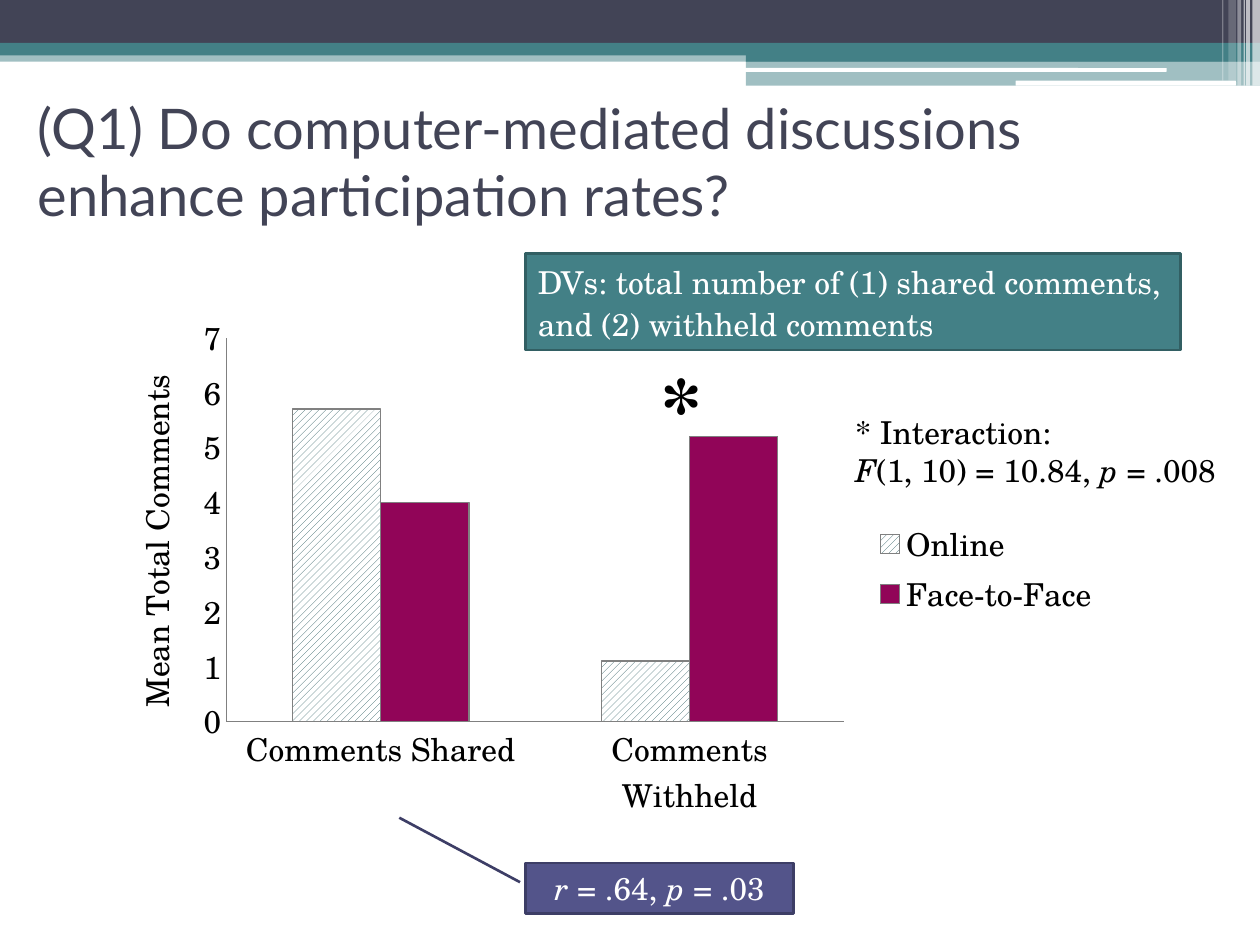
"""Builds the slide on participation rates in computer-mediated discussions."""
from dataclasses import dataclass

from lxml.etree import SubElement
from pptx import Presentation
from pptx.chart.data import CategoryChartData
from pptx.dml.color import RGBColor
from pptx.enum.chart import XL_CHART_TYPE, XL_LEGEND_POSITION, XL_TICK_MARK
from pptx.enum.dml import MSO_PATTERN
from pptx.enum.shapes import MSO_SHAPE
from pptx.enum.text import MSO_ANCHOR, PP_ALIGN
from pptx.oxml import parse_xml
from pptx.oxml.ns import nsdecls, qn
from pptx.util import Inches, Pt


@dataclass(frozen=True)
class Theme:
    heading_font: str = "Lato"
    body_font: str = "TeX Gyre Schola"
    title_size: int = 32
    body_size: int = 18
    star_size: int = 48
    ink: str = "424456"
    teal: str = "438086"
    teal_edge: str = "325F63"
    hatch: str = "326065"
    violet: str = "53548A"
    violet_edge: str = "3D3E66"
    plum: str = "910558"
    grey: str = "808080"
    black: str = "000000"
    white: str = "FFFFFF"


THEME = Theme()


def rgb(code):
    return RGBColor.from_string(code)


def style_font(font, size=THEME.body_size, face=THEME.body_font,
               color=THEME.black, bold=False, italic=False):
    font.size, font.name = Pt(size), face
    font.bold, font.italic = bold, italic
    font.color.rgb = rgb(color)


def write(frame, paragraphs, align=PP_ALIGN.LEFT, anchor=MSO_ANCHOR.TOP,
          line_spacing=None, space_before=None, **font):
    """Each paragraph is a list of pieces, alternating upright and italic."""
    frame.word_wrap = True
    frame.vertical_anchor = anchor
    for index, pieces in enumerate(paragraphs):
        paragraph = frame.paragraphs[0] if index == 0 else frame.add_paragraph()
        paragraph.alignment = align
        paragraph.line_spacing = line_spacing
        paragraph.space_before = space_before
        for position, piece in enumerate(pieces):
            if piece:
                run = paragraph.add_run()
                run.text = piece
                style_font(run.font, italic=position % 2 == 1, **font)


def place(element, index, inner=False, **fractions):
    """Gives a chart part a manual layout in fractions of the chart."""
    for old in element.findall(qn("c:layout")):
        element.remove(old)
    target = '<c:layoutTarget val="inner"/>' if inner else ""
    modes = "".join(f'<c:{key}Mode val="edge"/>' for key in "xy")
    values = "".join(f'<c:{key} val="{value}"/>' for key, value in fractions.items())
    element.insert(index, parse_xml(
        f'<c:layout {nsdecls("c")}><c:manualLayout>{target}{modes}{values}'
        "</c:manualLayout></c:layout>"))


class SlideBuilder:
    def __init__(self, slide, theme):
        self.slide, self.theme = slide, theme

    def shape(self, box, fill, kind=MSO_SHAPE.RECTANGLE, alpha=100,
              edge=None, adjustments=()):
        shape = self.slide.shapes.add_shape(kind, *map(Inches, box))
        shape.shadow.inherit = False
        shape.fill.solid()
        shape.fill.fore_color.rgb = rgb(fill)
        if alpha < 100:
            color = shape.fill._xPr.find(qn("a:solidFill"))[0]
            SubElement(color, qn("a:alpha"), val=str(alpha * 1000))
        if edge:
            shape.line.color.rgb = rgb(edge)
            shape.line.width = Pt(1.5)
        else:
            shape.line.fill.background()
        for index, value in enumerate(adjustments):
            shape.adjustments[index] = value
        return shape

    def text(self, box, paragraphs, **style):
        textbox = self.slide.shapes.add_textbox(*map(Inches, box))
        write(textbox.text_frame, paragraphs, **style)

    def banner(self):
        theme = self.theme
        for box, fill, alpha in [
            ((0, 0.4, 10, 0.09), theme.teal, 50),
            ((0, 0, 10, 0.34), theme.ink, 100),
            ((0, 0.34, 10, 0.1), theme.teal, 100),
            ((5.92, 0.39, 4.08, 0.1), theme.teal, 100),
            ((5.92, 0.48, 4.08, 0.2), theme.teal, 50),
        ]:
            self.shape(box, fill, alpha=alpha)
        for box in [(5.91, 0.54, 3.35, 0.03), (8.06, 0.64, 1.75, 0.04)]:
            self.shape(box, theme.white, MSO_SHAPE.ROUNDED_RECTANGLE,
                       adjustments=[0.17])
        for left, width, height, alpha in [
            (9.94, 0.06, 0.68, 65), (9.89, 0.03, 0.68, 65),
            (9.87, 0.01, 0.68, 60), (9.82, 0.03, 0.68, 40),
            (9.75, 0.06, 0.64, 20), (9.7, 0.01, 0.64, 30),
        ]:
            self.shape((left, 0, width, height), theme.white, alpha=alpha)

    def comments_chart(self, box):
        theme = self.theme
        data = CategoryChartData()
        data.categories = ["Comments Shared", "Comments Withheld"]
        data.add_series("Online", [5.7, 1.1])
        data.add_series("Face-to-Face", [4, 5.2])
        chart = self.slide.shapes.add_chart(
            XL_CHART_TYPE.COLUMN_CLUSTERED, *map(Inches, box), data).chart
        style_font(chart.font)
        chart.has_title = False
        chart.has_legend = True
        chart.legend.position = XL_LEGEND_POSITION.RIGHT
        chart.legend.include_in_layout = False

        bars = chart.plots[0]
        bars.gap_width, bars.overlap = 150, 0
        bars.vary_by_categories = False
        online, face_to_face = bars.series
        online.format.fill.patterned()
        online.format.fill.pattern = MSO_PATTERN.WIDE_UPWARD_DIAGONAL
        online.format.fill.fore_color.rgb = rgb(theme.hatch)
        online.format.fill.back_color.rgb = rgb(theme.white)
        face_to_face.format.fill.solid()
        face_to_face.format.fill.fore_color.rgb = rgb(theme.plum)

        means = chart.value_axis
        means.minimum_scale, means.maximum_scale, means.major_unit = 0, 7, 1
        means.has_major_gridlines = False
        means.tick_labels.number_format = "0"
        means.tick_labels.number_format_is_linked = False
        for axis in (means, chart.category_axis):
            axis.major_tick_mark = axis.minor_tick_mark = XL_TICK_MARK.NONE
        for part in (online, face_to_face, means, chart.category_axis):
            part.format.line.color.rgb = rgb(theme.grey)
            part.format.line.width = Pt(0.75)
        write(means.axis_title.text_frame, [["Mean Total Comments"]],
              align=PP_ALIGN.CENTER)

        place(means.axis_title._element, 1, x=0.03, y=0.13)
        place(chart._chartSpace.chart.plotArea, 0, inner=True,
              x=0.13, y=0.07, w=0.61, h=0.73)
        place(chart.legend._element, 1, x=0.76, y=0.41, w=0.24, h=0.2)


def main():
    presentation = Presentation()
    presentation.slide_width, presentation.slide_height = Inches(10), Inches(7.5)
    slide = presentation.slides.add_slide(presentation.slide_layouts[6])
    builder = SlideBuilder(slide, THEME)

    builder.banner()
    builder.text((0.2, 0.84, 9.61, 0.87),
                 [["(Q1) Do computer-mediated discussions enhance participation rates?"]],
                 anchor=MSO_ANCHOR.MIDDLE, size=THEME.title_size,
                 face=THEME.heading_font, color=THEME.ink)
    builder.comments_chart((0.75, 2.39, 8.04, 4.17))
    builder.text((5.05, 2.78, 0.71, 0.91), [["*"]], align=PP_ALIGN.CENTER,
                 size=THEME.star_size, bold=True)
    builder.text((6.69, 3.23, 3.31, 0.71),
                 [["* Interaction:"], ["", "F", "(1, 10) = 10.84, ", "p", " = .008"]])

    correlation = builder.shape((4.17, 6.85, 2.13, 0.4), THEME.violet,
                                MSO_SHAPE.LINE_CALLOUT_1, edge=THEME.violet_edge,
                                adjustments=[0.38, -0.02, -0.9, -0.47])
    write(correlation.text_frame, [["", "r", " = .64, ", "p", " = .03"]],
          align=PP_ALIGN.CENTER, anchor=MSO_ANCHOR.MIDDLE, color=THEME.white)
    variables = builder.shape((4.17, 2.01, 5.2, 0.77), THEME.teal,
                              edge=THEME.teal_edge)
    write(variables.text_frame,
          [["DVs: total number of (1) shared comments, and (2) withheld comments"]],
          line_spacing=1.1, space_before=Pt(12), color=THEME.white)

    presentation.save("out.pptx")


if __name__ == "__main__":
    main()
